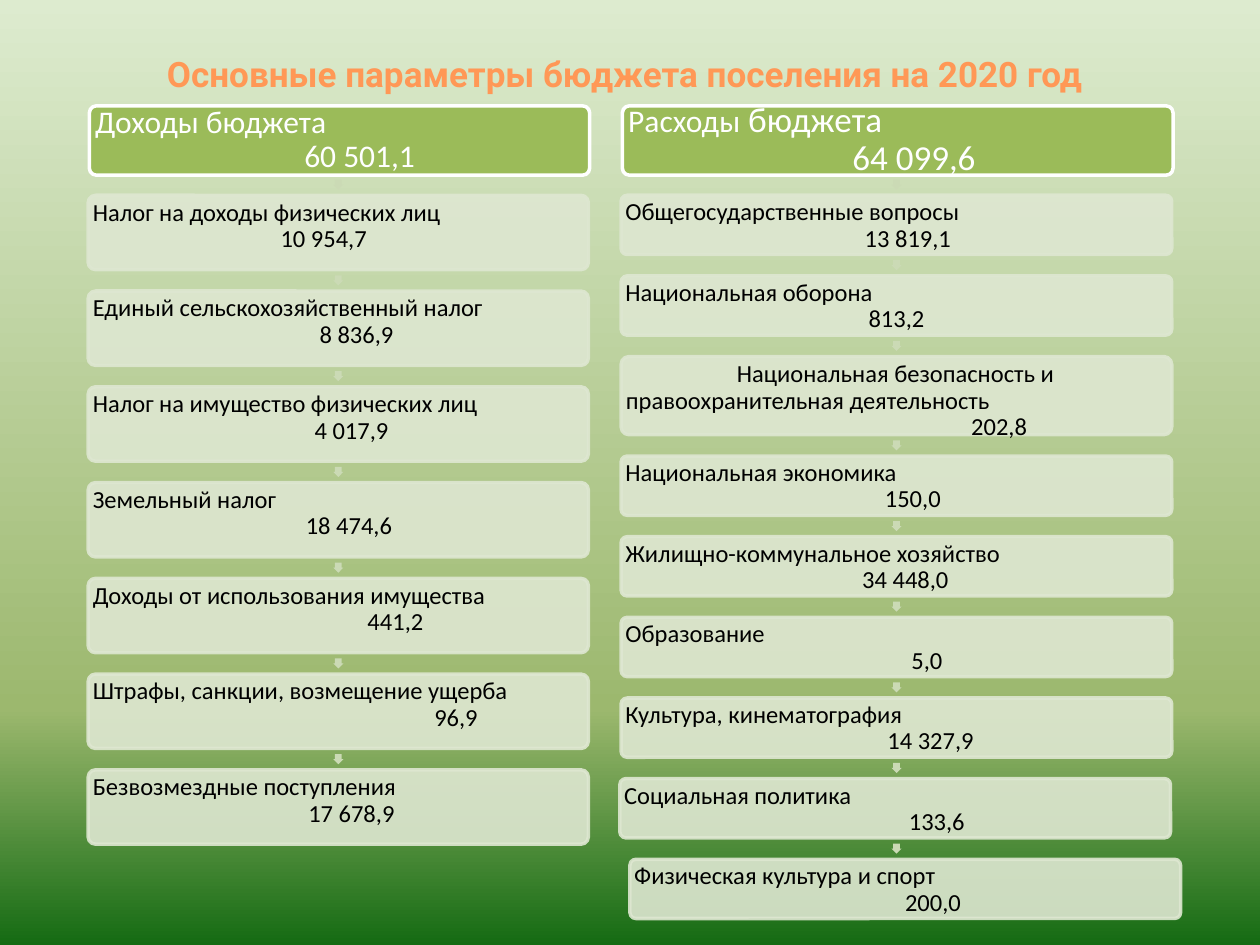
from copy import deepcopy

from lxml import etree
from pptx import Presentation
from pptx.dml.color import RGBColor
from pptx.enum.shapes import MSO_SHAPE
from pptx.enum.text import MSO_ANCHOR, PP_ALIGN
from pptx.oxml.ns import qn
from pptx.util import Inches, Pt

ROUNDED = MSO_SHAPE.ROUNDED_RECTANGLE
ARROW = MSO_SHAPE.RIGHT_ARROW
TOP, MIDDLE = MSO_ANCHOR.TOP, MSO_ANCHOR.MIDDLE
LEFT, CENTER = PP_ALIGN.LEFT, PP_ALIGN.CENTER

COLORS = {
    "header": "9BBB59",
    "card": "DEE7D1",
    "arrow": "CBDAB5",
    "white": "FFFFFF",
    "black": "000000",
}
PAGE_STOPS = [(0, "DDEBCF"), (75, "9CB86E"), (100, "156B13")]
TITLE_STOPS = [(0, "9D4700"), (78, "FF9856"), (100, "FFF5F1")]

HEADER_TOP, HEADER_HEIGHT = 0.84, 0.55
CARDS_TOP, GAP, ARROW_SIZE = 1.55, 0.17, 0.08

INCOME = {
    "left": 0.7, "width": 3.97, "height": 0.59,
    "header": ([("Доходы бюджета", 18)], "60 501,1", 1.66),
    "cards": [
        ("Налог на доходы физических лиц", "10 954,7", 1.49, {}),
        ("Единый сельскохозяйственный налог", "8 836,9", 1.8, {}),
        ("Налог на имущество физических лиц", "4 017,9", 1.76, {}),
        ("Земельный налог", "18 474,6", 1.69, {}),
        ("Доходы от использования имущества", "441,2", 2.18, {}),
        ("Штрафы, санкции, возмещение ущерба", "96,9", 2.71, {}),
        ("Безвозмездные поступления", "17 678,9", 1.71, {}),
    ],
}
EXPENSES = {
    "left": 4.93, "width": 4.37, "height": 0.47,
    "header": ([("Расходы", 18), (" бюджета", 20)], "64 099,6", 1.78),
    "cards": [
        ("Общегосударственные вопросы", "13 819,1", 1.9, {}),
        ("Национальная оборона", "813,2", 1.93, {}),
        ("Национальная безопасность и правоохранительная деятельность",
         "202,8", 2.74, {"height": 0.62, "first": 0.88}),
        ("Национальная экономика", "150,0", 2.06, {}),
        ("Жилищно-коммунальное хозяйство", "34 448,0", 1.88, {}),
        ("Образование", "5,0", 2.27, {}),
        ("Культура, кинематография", "14 327,9", 2.08, {}),
        ("Социальная политика", "133,6", 2.26, {"shift": -0.01}),
        ("Физическая культура и спорт", "200,0", 2.15, {"shift": 0.07}),
    ],
}


def set_values(target, values):
    for name, value in values.items():
        setattr(target, name, value)


def paint(fill, color):
    fill.solid()
    fill.fore_color.rgb = RGBColor.from_string(COLORS[color])


def paint_gradient(fill, element, stops):
    fill.gradient()
    fill.gradient_angle = 270
    stop_list = next(element.iter(qn("a:gsLst")))
    stop_list.append(deepcopy(stop_list[-1]))
    for stop, (position, color) in zip(stop_list, stops):
        stop.set("pos", str(position * 1000))
        for child in list(stop):
            stop.remove(child)
        etree.SubElement(stop, qn("a:srgbClr"), val=color)


def make_translucent(shape, percent):
    for color in shape._element.spPr.iter(qn("a:srgbClr")):
        etree.SubElement(color, qn("a:alpha"), val=str(percent * 1000))


def set_frame(frame, anchor, inset):
    margins = ("margin_left", "margin_top", "margin_right", "margin_bottom")
    set_values(frame, dict.fromkeys(margins, Inches(inset)))
    set_values(frame, {"word_wrap": True, "vertical_anchor": anchor})


def write_line(para, spans, color, indent=0, first=0):
    set_values(para, {"alignment": LEFT, "line_spacing": 0.9})
    properties = para._p.get_or_add_pPr()
    properties.set("marL", str(Inches(indent)))
    properties.set("indent", str(Inches(first)))
    for text, size in spans:
        span = para.add_run()
        span.text = text
        set_values(span.font, {"size": Pt(size), "name": "Calibri"})
        paint(span.font.fill, color)


def add_panel(page, box, fill, line):
    shape = page.shapes.add_shape(ROUNDED, *map(Inches, box))
    shape.shadow.inherit = False
    shape.adjustments[0] = 0.1
    paint(shape.fill, fill)
    paint(shape.line.fill, line)
    shape.line.width = Pt(2)
    return shape


def add_entry(shape, spans, value, indent, color, first=0):
    frame = shape.text_frame
    write_line(frame.paragraphs[0], spans, color, first=first)
    write_line(frame.add_paragraph(), [(value, spans[-1][1])], color, indent)


def add_header(page, box, spans, value, indent):
    shape = add_panel(page, box, "header", "white")
    set_frame(shape.text_frame, MIDDLE, 0.03)
    add_entry(shape, spans, value, indent, "white")


def add_card(page, box, name, value, indent, first):
    shape = add_panel(page, box, "card", "card")
    make_translucent(shape, 90)
    set_frame(shape.text_frame, TOP, 0.02)
    add_entry(shape, [(name, 14)], value, indent, "black", first)


def add_arrow(page, center, middle):
    half = ARROW_SIZE / 2
    box = (center - half, middle - half, ARROW_SIZE, ARROW_SIZE)
    shape = page.shapes.add_shape(ARROW, *map(Inches, box))
    shape.shadow.inherit = False
    shape.rotation = 90
    shape.adjustments[0] = 0.667
    paint(shape.fill, "arrow")
    shape.line.fill.background()


def add_column(page, column):
    left, width = column["left"], column["width"]
    add_header(page, (left + 0.01, HEADER_TOP, width, HEADER_HEIGHT), *column["header"])
    top = CARDS_TOP
    for name, value, indent, options in column["cards"]:
        height = options.get("height", column["height"])
        box = (left + options.get("shift", 0), top, width, height)
        add_arrow(page, left + width / 2, top - GAP / 2)
        add_card(page, box, name, value, indent, options.get("first", 0))
        top += height + GAP


def add_title(page, box):
    frame = page.shapes.add_textbox(*map(Inches, box)).text_frame
    set_frame(frame, MIDDLE, 0.05)
    para = frame.paragraphs[0]
    para.alignment = CENTER
    span = para.add_run()
    span.text = "Основные параметры бюджета поселения на 2020 год"
    set_values(span.font, {"size": Pt(20), "name": "Roboto", "bold": True})
    paint_gradient(span.font.fill, span._r, TITLE_STOPS)


def main():
    deck = Presentation()
    set_values(deck, {"slide_width": Inches(10), "slide_height": Inches(7.5)})
    page = deck.slides.add_slide(deck.slide_layouts[6])
    paint_gradient(page.background.fill, page.element, PAGE_STOPS)
    add_title(page, (0.46, 0.27, 9, 0.63))
    for column in (INCOME, EXPENSES):
        add_column(page, column)
    deck.save("out.pptx")


if __name__ == "__main__":
    main()
